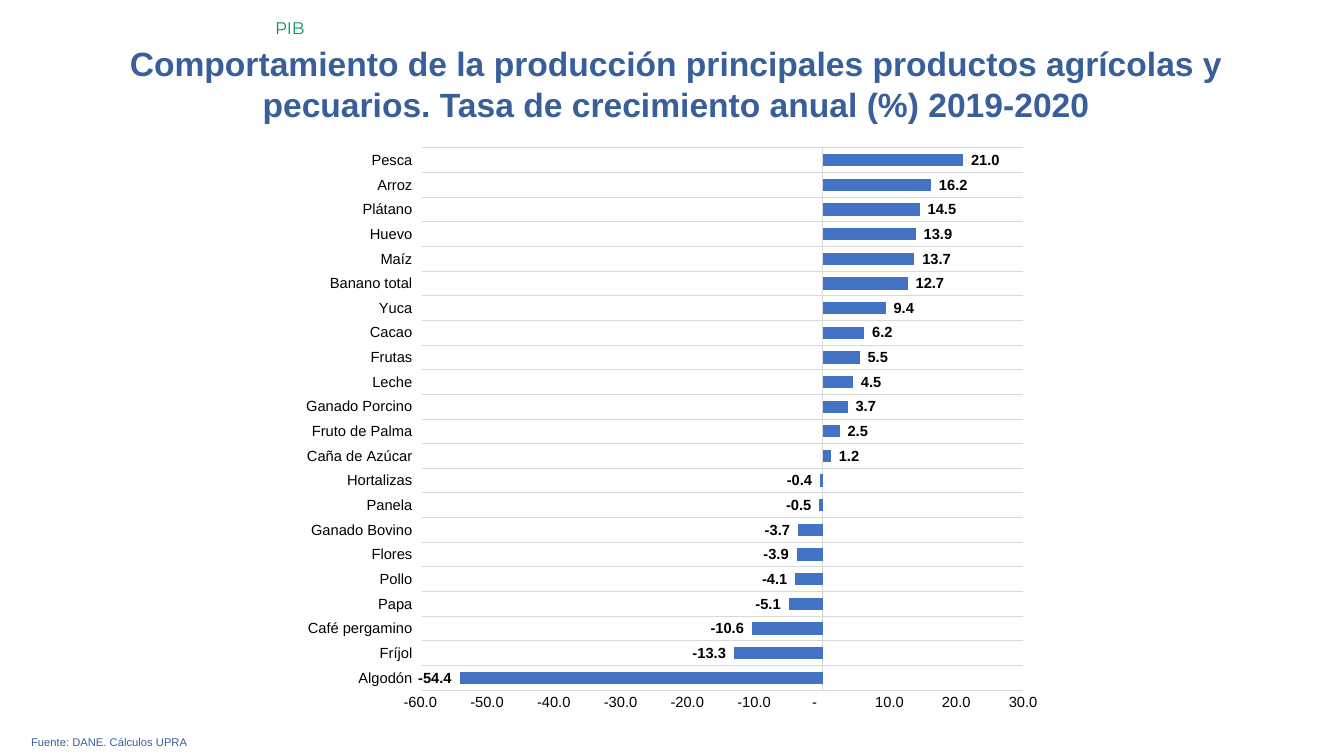
from lxml import etree
from pptx import Presentation
from pptx import util as u
from pptx.chart import data as chart_data
from pptx.dml import color
from pptx.enum import chart as ch, text as t

BLUE, GREEN, BAR, GRID, BLACK = "395F9B", "009267", "4472C4", "D9D9D9", "000000"
NUMBER_FORMAT = '_-* #,##0.0_-;\\-* #,##0.0_-;_-* "-"??_-;'


def rgb(hex_code):
    return color.RGBColor.from_string(hex_code)


def set_font(font, size, hex_code, name="Arial", bold=False):
    font.size, font.name, font.bold = u.Pt(size), name, bold
    font.color.rgb = rgb(hex_code)


prs = Presentation()
prs.slide_width, prs.slide_height = u.Inches(13.33), u.Inches(7.5)
slide = prs.slides.add_slide(prs.slide_layouts[5])

# Title
title = slide.shapes.title
title.left, title.top = u.Inches(0.45), u.Inches(0.38)
title.width, title.height = u.Inches(12.51), u.Inches(0.91)
title.text_frame.text = (
    "Comportamiento de la producción principales productos agrícolas y "
    "pecuarios. Tasa de crecimiento anual (%) 2019-2020")
title.text_frame.vertical_anchor = t.MSO_ANCHOR.TOP
title.text_frame.auto_size = t.MSO_AUTO_SIZE.SHAPE_TO_FIT_TEXT
title.text_frame.paragraphs[0].alignment = t.PP_ALIGN.CENTER
set_font(title.text_frame.paragraphs[0].runs[0].font, 24, BLUE, bold=True)

# Source line and section label
for words, box, size, hex_code, name, align in [
    ("Fuente: DANE. Cálculos UPRA", (0.21, 7.25, 12.91, 0.24), 8, BLUE,
     "Arial", t.PP_ALIGN.JUSTIFY),
    ("PIB", (2.63, 0.13, 10.7, 0.3), 12, GREEN, "Montserrat", t.PP_ALIGN.LEFT),
]:
    frame = slide.shapes.add_textbox(*map(u.Inches, box)).text_frame
    frame.word_wrap = True
    frame.auto_size = t.MSO_AUTO_SIZE.SHAPE_TO_FIT_TEXT
    frame.text = words
    frame.paragraphs[0].alignment = align
    set_font(frame.paragraphs[0].runs[0].font, size, hex_code, name)

# Growth rate by product, from the bottom bar to the top one
growth = {
    "Algodón": -54.4, "Fríjol": -13.3, "Café pergamino": -10.6, "Papa": -5.1,
    "Pollo": -4.1, "Flores": -3.9, "Ganado Bovino": -3.7, "Panela": -0.5,
    "Hortalizas": -0.4, "Caña de Azúcar": 1.2, "Fruto de Palma": 2.5,
    "Ganado Porcino": 3.7, "Leche": 4.5, "Frutas": 5.5, "Cacao": 6.2,
    "Yuca": 9.4, "Banano total": 12.7, "Maíz": 13.7, "Huevo": 13.9,
    "Plátano": 14.5, "Arroz": 16.2, "Pesca": 21.0,
}
growth_data = chart_data.CategoryChartData()
growth_data.categories = list(growth)
growth_data.add_series("Series 1", list(growth.values()))
growth_chart = slide.shapes.add_chart(
    ch.XL_CHART_TYPE.BAR_CLUSTERED, u.Inches(2.89), u.Inches(1.35),
    u.Inches(7.64), u.Inches(5.85), growth_data).chart
growth_chart.has_legend = False
growth_chart.has_title = False
set_font(growth_chart.font, 10.5, BLACK)

# Bars and value labels
plot = growth_chart.plots[0]
plot.gap_width = 100
plot.vary_by_categories = False
bars = plot.series[0]
bars.invert_if_negative = False
bars.format.fill.solid()
bars.format.fill.fore_color.rgb = rgb(BAR)
labels = bars.data_labels
labels.show_value = True
labels.position = ch.XL_LABEL_POSITION.OUTSIDE_END
labels.number_format, labels.number_format_is_linked = NUMBER_FORMAT, False
set_font(labels.font, 10.5, BLACK, bold=True)

# Axes
products, rates = growth_chart.category_axis, growth_chart.value_axis
for axis in (products, rates):
    axis.major_tick_mark = axis.minor_tick_mark = ch.XL_TICK_MARK.NONE
    set_font(axis.tick_labels.font, 10.5, BLACK)
products.tick_label_position = ch.XL_TICK_LABEL_POSITION.LOW
products.has_major_gridlines = True
for line in (products.format.line, products.major_gridlines.format.line):
    line.color.rgb = rgb(GRID)
    line.width = u.Pt(0.75)
rates.has_major_gridlines = False
rates.format.line.fill.background()
rates.minimum_scale, rates.maximum_scale, rates.major_unit = -60, 30, 10
rates.tick_labels.number_format = NUMBER_FORMAT
rates.tick_labels.number_format_is_linked = False

# Plot area, as fractions of the chart frame
C = "{http://schemas.openxmlformats.org/drawingml/2006/chart}"
plot_area = growth_chart.element.find(f".//{C}plotArea")
for old_layout in plot_area.findall(C + "layout"):
    plot_area.remove(old_layout)
layout = etree.Element(C + "layout")
plot_area.insert(0, layout)
manual = etree.SubElement(layout, C + "manualLayout")
for tag, value in [("layoutTarget", "inner"), ("xMode", "edge"), ("yMode", "edge"),
                   ("x", "0.17"), ("y", "0.02"), ("w", "0.78"), ("h", "0.92")]:
    etree.SubElement(manual, C + tag, val=value)

prs.save("out.pptx")
